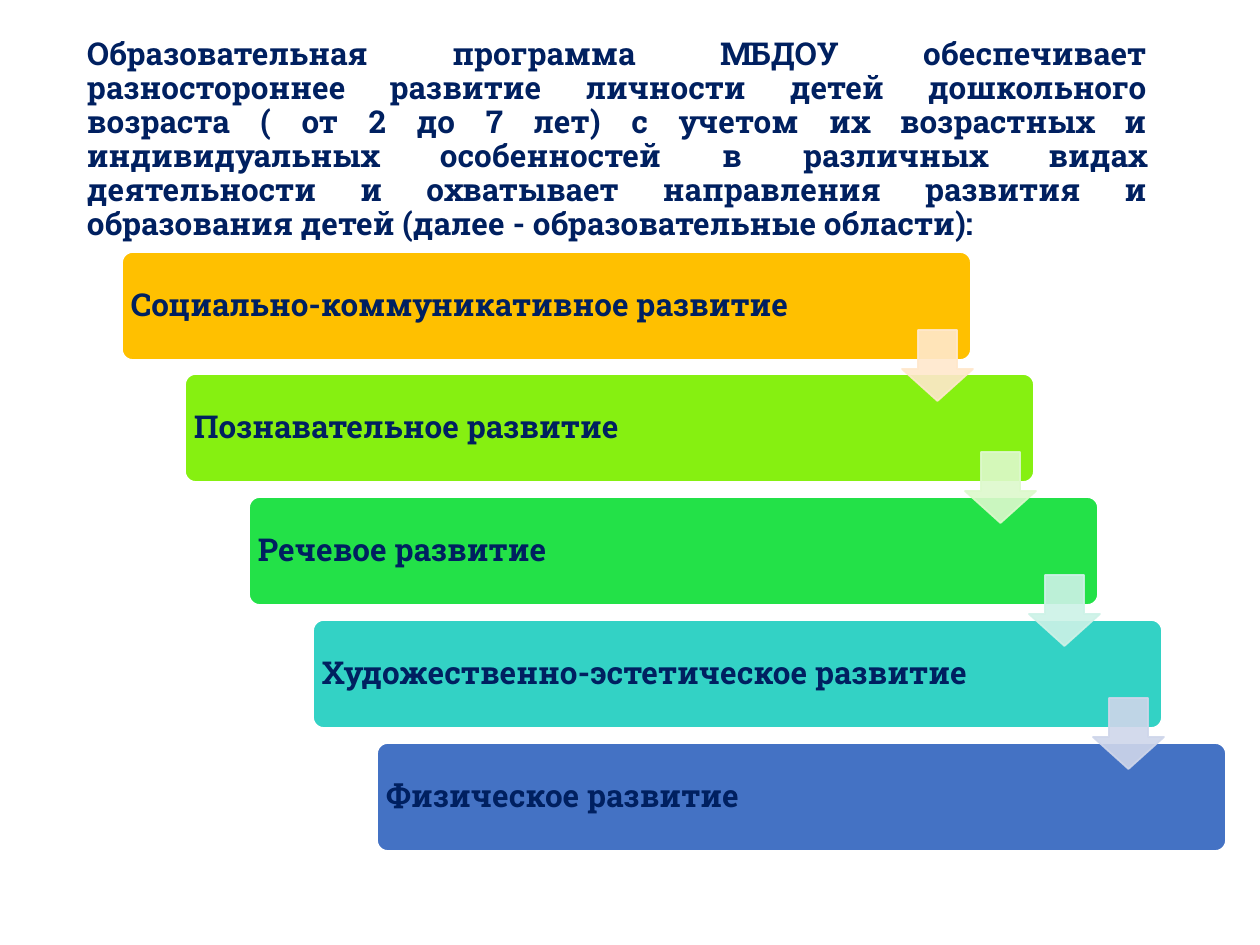
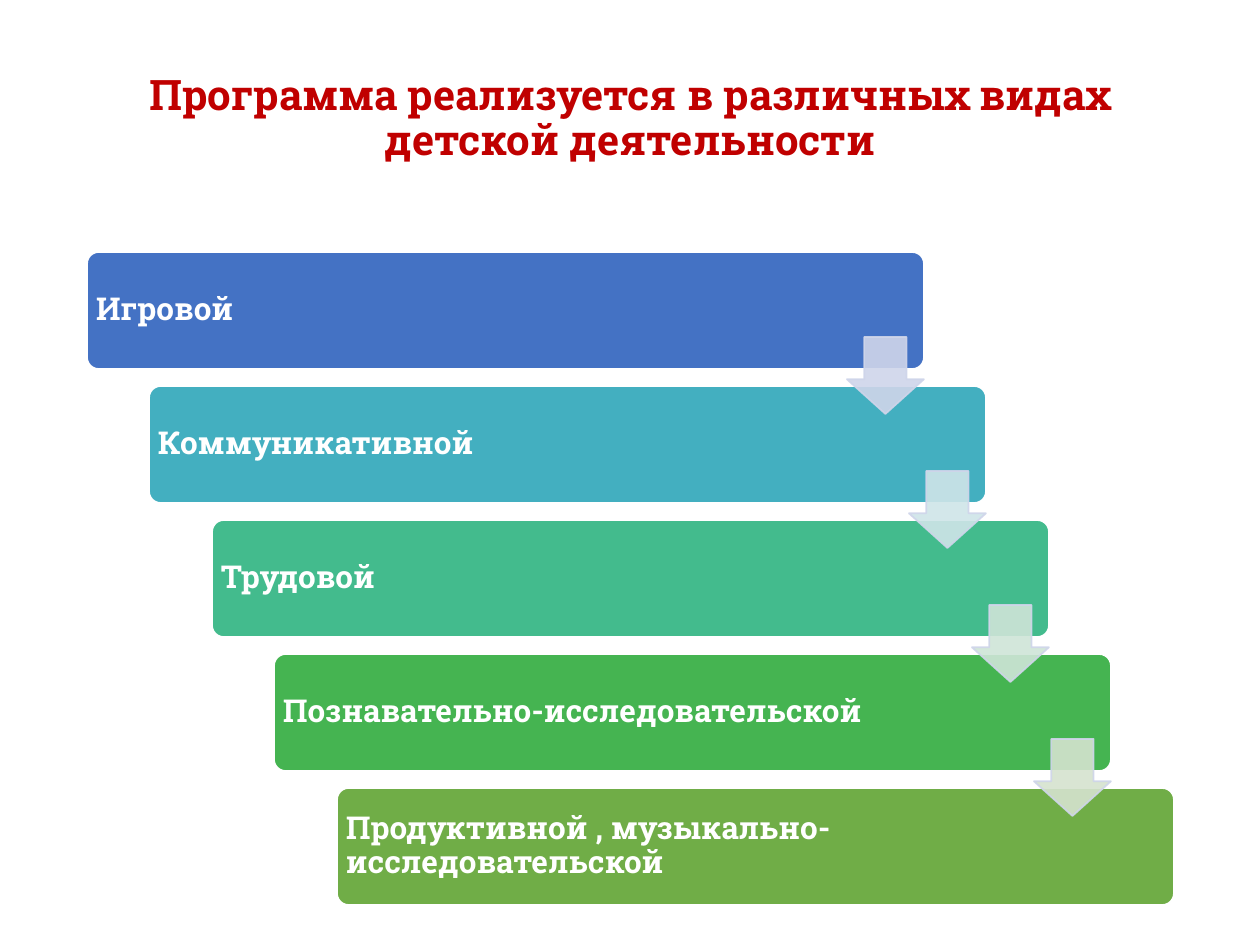
"""Build two staircase slides about a kindergarten programme."""
import pptx
import pptx.dml.color
import pptx.enum.shapes
import pptx.enum.text
import pptx.oxml.ns
import pptx.util
from lxml import etree

RGBColor = pptx.dml.color.RGBColor
Shape = pptx.enum.shapes.MSO_SHAPE
Align = pptx.enum.text.PP_ALIGN

EMU_PER_PX = 914400 / 126
FONT = "Roboto Slab"
NAVY = RGBColor(0x00, 0x20, 0x60)
RED = RGBColor(0xC0, 0x00, 0x00)
WHITE = RGBColor(0xFF, 0xFF, 0xFF)
BLUE = RGBColor(0x44, 0x72, 0xC4)
AMBER = RGBColor(0xFF, 0xC0, 0x00)
LIME = RGBColor(0x86, 0xF0, 0x11)
GREEN = RGBColor(0x23, 0xE1, 0x48)
TURQUOISE = RGBColor(0x33, 0xD2, 0xC5)
TEAL = RGBColor(0x43, 0xAF, 0xC0)
JADE = RGBColor(0x43, 0xBB, 0x8D)
LEAF = RGBColor(0x45, 0xB4, 0x51)
OLIVE = RGBColor(0x70, 0xAD, 0x47)
PALE_AMBER = RGBColor(0xFF, 0xE8, 0xCC)
PALE_LIME = RGBColor(0xDD, 0xF9, 0xCC)
PALE_GREEN = RGBColor(0xCD, 0xF2, 0xE7)
PALE_BLUE = RGBColor(0xCF, 0xD6, 0xEA)
PALE_PERIWINKLE = RGBColor(0xCF, 0xD5, 0xEA)
PALE_TEAL = RGBColor(0xCF, 0xE5, 0xE8)
PALE_JADE = RGBColor(0xCF, 0xE5, 0xD8)
PALE_LEAF = RGBColor(0xD5, 0xE3, 0xCF)


def px(*lengths):
    return [pptx.util.Emu(round(length * EMU_PER_PX)) for length in lengths]


def write(frame, text, size=18, color=NAVY, align=Align.LEFT):
    paragraph = frame.paragraphs[0]
    paragraph.alignment = align
    paragraph.line_spacing = 0.9
    run = paragraph.add_run()
    run.text = text
    run.font.name = FONT
    run.font.size = pptx.util.Pt(size)
    run.font.bold = True
    run.font.color.rgb = color


class Deck:
    def __init__(self):
        self.presentation = pptx.Presentation()
        self.presentation.slide_width, self.presentation.slide_height = px(1260, 945)
        self.slide = None

    def new_slide(self):
        self.slide = self.presentation.slides.add_slide(self.presentation.slide_layouts[6])

    def text(self, box, text, insets=(13, 6), **style):
        frame = self.slide.shapes.add_textbox(*px(*box)).text_frame
        frame.word_wrap = True
        frame.vertical_anchor = pptx.enum.text.MSO_ANCHOR.MIDDLE
        side, end = px(*insets)
        frame.margin_left = frame.margin_right = side
        frame.margin_top = frame.margin_bottom = end
        write(frame, text, **style)

    def shape(self, kind, box, fill, line, adjustments):
        shape = self.slide.shapes.add_shape(kind, *px(*box))
        shape.shadow.inherit = False
        shape.fill.solid()
        shape.fill.fore_color.rgb = fill
        shape.line.color.rgb = line
        shape.line.width = pptx.util.Pt(1)
        for index, value in enumerate(adjustments):
            shape.adjustments[index] = value
        return shape

    def step(self, box, text, text_width, fill, color):
        left, top, _, height = box
        self.shape(Shape.ROUNDED_RECTANGLE, box, fill, WHITE, [0.1])
        self.text((left, top, text_width, height), text, insets=(9, 9), color=color)

    def arrow(self, box, fill, line):
        shape = self.shape(Shape.DOWN_ARROW, box, fill, line, [0.55, 0.45])
        qn = pptx.oxml.ns.qn
        for color in list(shape.element.spPr.iter(qn("a:srgbClr"))):
            etree.SubElement(color, qn("a:alpha"), val="90000")

    def staircase(self, first, travel, text_width, arrow_offset, arrow_size,
                  steps, arrows, color, arrow_line=None):
        left, top, width, height = first
        gaps = len(steps) - 1
        corners = [(left + travel[0] * i // gaps, top + travel[1] * i // gaps)
                   for i in range(len(steps))]
        for corner, (text, fill) in zip(corners, steps):
            self.step((*corner, width, height), text, text_width, fill, color)
        for (x, y), fill in zip(corners, arrows):
            box = (x + arrow_offset[0], y + arrow_offset[1], arrow_size, arrow_size)
            self.arrow(box, fill, arrow_line or fill)


def main():
    deck = Deck()

    deck.new_slide()
    deck.text(
        (74, 49, 1086, 183),
        "Образовательная программа МБДОУ обеспечивает разностороннее развитие личности "
        "детей дошкольного возраста ( от 2 до 7 лет) с учетом их возрастных и "
        "индивидуальных особенностей в различных видах деятельности и охватывает "
        "направления развития и образования детей (далее - образовательные области):",
        align=Align.JUSTIFY)
    deck.staircase(
        first=(122, 252, 849, 108), travel=(255, 491), text_width=716,
        arrow_offset=(780, 78), arrow_size=71, color=NAVY,
        steps=[("Социально-коммуникативное развитие", AMBER),
               ("Познавательное развитие", LIME),
               ("Речевое развитие", GREEN),
               ("Художественно-эстетическое развитие", TURQUOISE),
               ("Физическое развитие", BLUE)],
        arrows=[PALE_AMBER, PALE_LIME, PALE_GREEN, PALE_BLUE])

    deck.new_slide()
    deck.text((87, 50, 1086, 139),
              "Программа реализуется в различных видах детской деятельности",
              size=24, color=RED, align=Align.CENTER)
    deck.staircase(
        first=(87, 252, 837, 117), travel=(250, 536), text_width=698,
        arrow_offset=(760, 85), arrow_size=77, color=WHITE,
        steps=[("Игровой", BLUE),
               ("Коммуникативной", TEAL),
               ("Трудовой", JADE),
               ("Познавательно-исследовательской", LEAF),
               ("Продуктивной , музыкально-исследовательской", OLIVE)],
        arrows=[PALE_PERIWINKLE, PALE_TEAL, PALE_JADE, PALE_LEAF],
        arrow_line=PALE_PERIWINKLE)

    deck.presentation.save("out.pptx")


if __name__ == "__main__":
    main()
